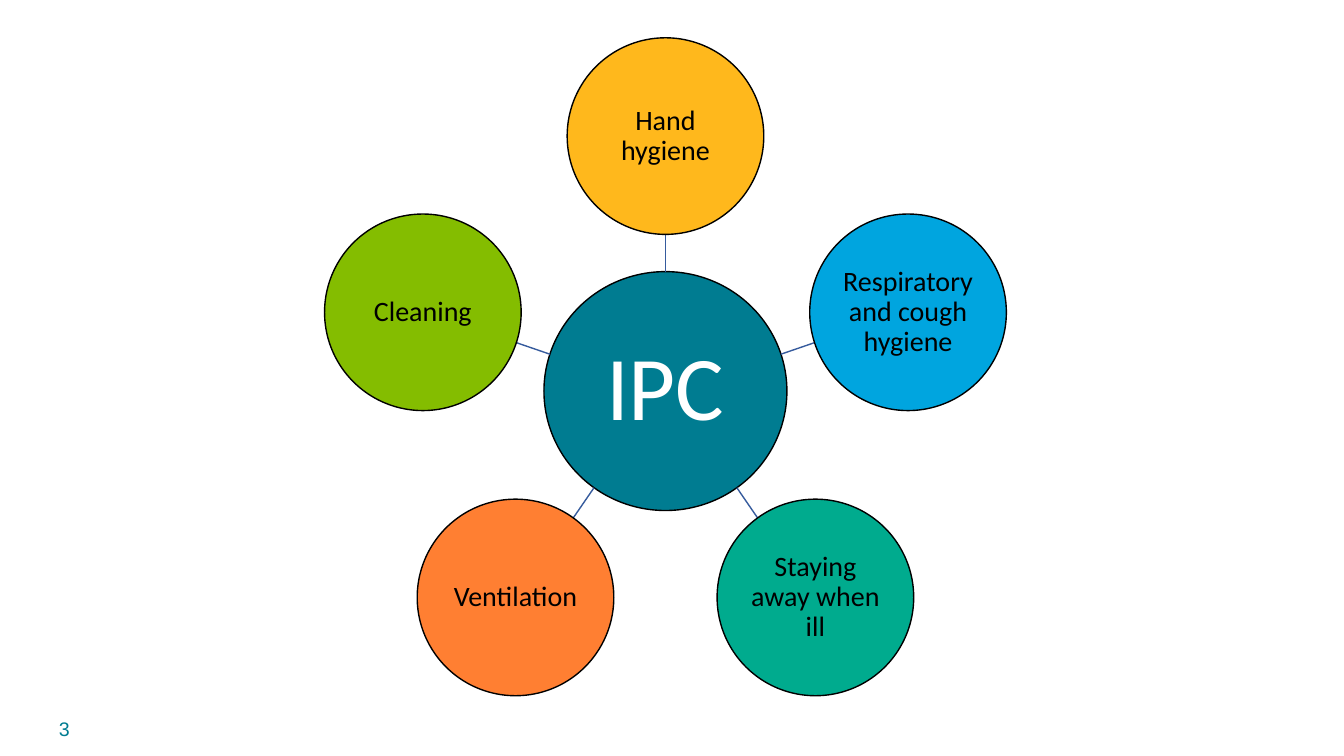
from dataclasses import dataclass
from math import cos, radians, sin

from lxml import etree
from pptx import Presentation
from pptx.dml.color import RGBColor
from pptx.enum.shapes import MSO_CONNECTOR, MSO_SHAPE
from pptx.enum.text import MSO_ANCHOR, PP_ALIGN
from pptx.oxml.ns import qn
from pptx.util import Inches, Pt

OVAL = MSO_SHAPE.OVAL
STRAIGHT = MSO_CONNECTOR.STRAIGHT
MIDDLE = MSO_ANCHOR.MIDDLE
CENTER = PP_ALIGN.CENTER
RIGHT = PP_ALIGN.RIGHT


@dataclass(frozen=True)
class Theme:
    """Colours, fonts and type sizes of the slide."""
    teal: str = "007C91"
    outline: str = "000000"
    spoke: str = "365B9D"
    hub_text: str = "FFFFFF"
    label_text: str = "000000"
    body_font: str = "Calibri"
    number_font: str = "Arial"
    hub_size: int = 65
    label_size: int = 20
    number_size: int = 14


THEME = Theme()
CENTER_X, CENTER_Y = 6.6, 3.88
HUB_WIDTH, HUB_HEIGHT = 2.41, 2.37
MEASURE_DIAMETER = 1.95
RING_RADIUS = 2.53
MEASURES = [
    ("Hand hygiene", "FFB81C"),
    ("Respiratory and cough hygiene", "00A5DF"),
    ("Staying away when ill", "00AB8E"),
    ("Ventilation", "FF7F32"),
    ("Cleaning", "84BD00"),
]


def write_text(shape, text, size, color, font_name, alignment, margin=None):
    """Fill a shape with one formatted paragraph, anchored in the middle."""
    frame = shape.text_frame
    frame.word_wrap = True
    frame.vertical_anchor = MIDDLE
    if margin is not None:
        for side in ("left", "top", "right", "bottom"):
            setattr(frame, f"margin_{side}", Inches(margin))
    paragraph = frame.paragraphs[0]
    paragraph.text = text
    paragraph.alignment = alignment
    paragraph.line_spacing = 0.9
    for name, value in {"size": Pt(size), "name": font_name}.items():
        setattr(paragraph.font, name, value)
    paragraph.font.color.rgb = RGBColor.from_string(color)


def add_circle(slide, x, y, width, height, fill):
    """Add an outlined ellipse centred on x and y."""
    shape = slide.shapes.add_shape(
        OVAL, Inches(x - width / 2), Inches(y - height / 2), Inches(width), Inches(height))
    shape.shadow.inherit = False
    shape.fill.solid()
    shape.fill.fore_color.rgb = RGBColor.from_string(fill)
    shape.line.color.rgb = RGBColor.from_string(THEME.outline)
    shape.line.width = Pt(1)
    return shape


def add_spoke(slide, start, end):
    """Add a thin straight line between two points."""
    connector = slide.shapes.add_connector(STRAIGHT, *map(Inches, (*start, *end)))
    connector.line.color.rgb = RGBColor.from_string(THEME.spoke)
    connector.line.width = Pt(1)
    etree.SubElement(connector.element.spPr, qn("a:effectLst"))


def point_on_ring(angle, radius_x, radius_y):
    """Return the point at a clockwise angle from the top around the hub."""
    return CENTER_X + radius_x * sin(angle), CENTER_Y - radius_y * cos(angle)


def add_measure(slide, angle, label, fill):
    """Add one outer circle and the spoke that joins it to the hub."""
    inner_edge = RING_RADIUS - MEASURE_DIAMETER / 2
    add_spoke(slide, point_on_ring(angle, HUB_WIDTH / 2, HUB_HEIGHT / 2),
              point_on_ring(angle, inner_edge, inner_edge))
    x, y = point_on_ring(angle, RING_RADIUS, RING_RADIUS)
    circle = add_circle(slide, x, y, MEASURE_DIAMETER, MEASURE_DIAMETER, fill)
    write_text(circle, label, THEME.label_size, THEME.label_text,
               THEME.body_font, CENTER, 0.01)


def add_page_number(slide, number):
    """Add the page number at the lower left."""
    box = slide.shapes.add_textbox(Inches(0.14), Inches(7.04), Inches(0.65), Inches(0.4))
    write_text(box, number, THEME.number_size, THEME.teal, THEME.number_font, RIGHT)


def main():
    """Build the slide and save it."""
    presentation = Presentation()
    presentation.slide_width = Inches(13.33)
    presentation.slide_height = Inches(7.5)
    slide = presentation.slides.add_slide(presentation.slide_layouts[6])
    add_page_number(slide, "3")
    hub = add_circle(slide, CENTER_X, CENTER_Y, HUB_WIDTH, HUB_HEIGHT, THEME.teal)
    write_text(hub, "IPC", THEME.hub_size, THEME.hub_text, THEME.body_font, CENTER, 0.05)
    for index, (label, fill) in enumerate(MEASURES):
        add_measure(slide, radians(360 / len(MEASURES) * index), label, fill)
    presentation.save("out.pptx")


if __name__ == "__main__":
    main()
